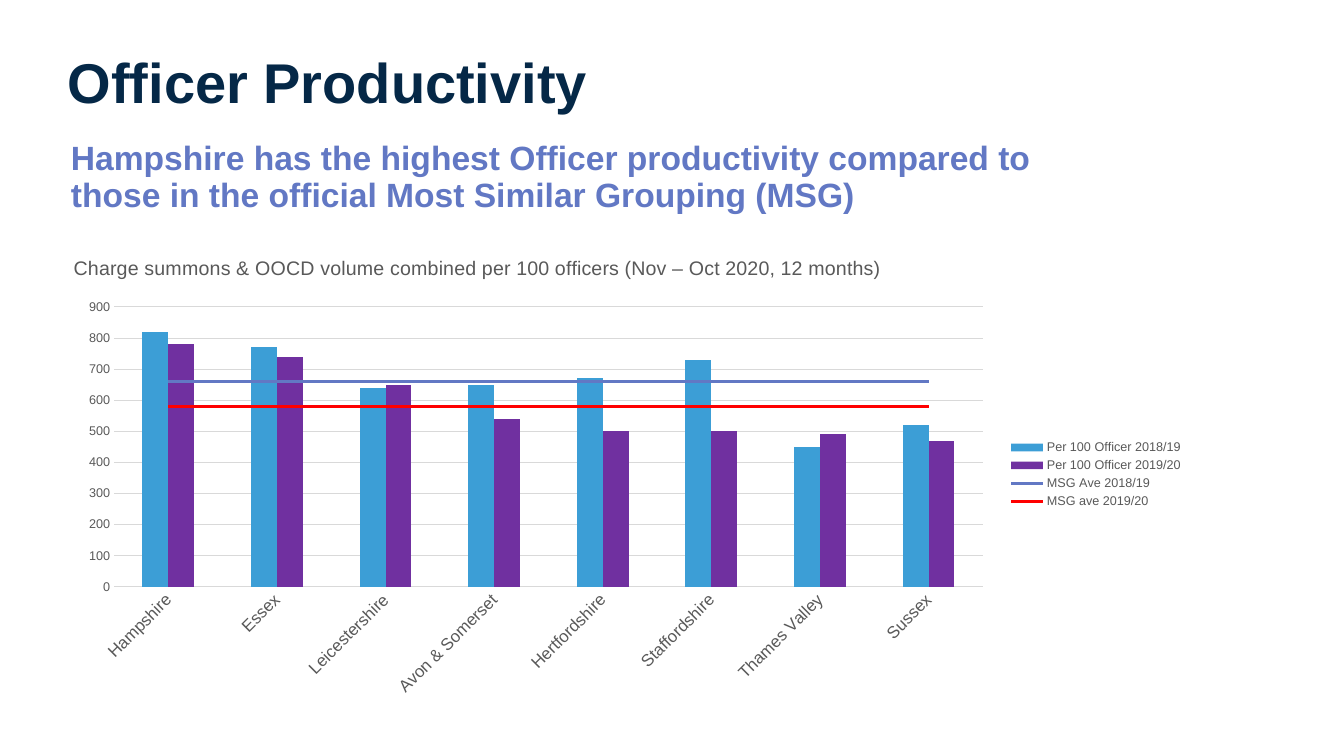
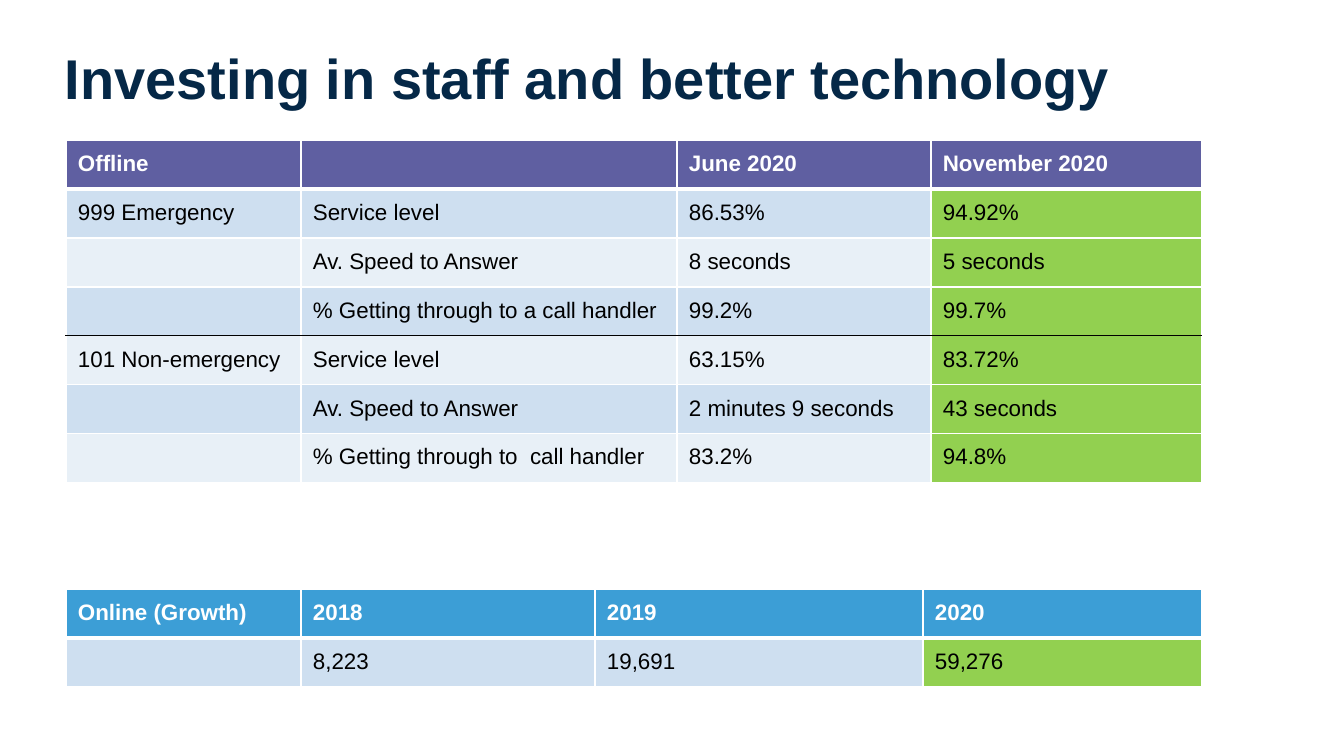
from dataclasses import dataclass

import lxml.etree
import pptx
import pptx.chart.chart
import pptx.chart.data
import pptx.dml.color
import pptx.enum.chart
import pptx.enum.text
import pptx.oxml.ns
import pptx.slide
import pptx.table
import pptx.text.text
import pptx.util

EMU_PER_PX = 914400 / 100.8
FONT = "Arial"
COLORS = {
    "navy": "052847",
    "periwinkle": "6278C4",
    "blue": "3C9ED6",
    "purple": "7030A0",
    "violet": "5F5FA1",
    "red": "FF0000",
    "green": "92D050",
    "band": "CEDFF0",
    "light_band": "E8F0F7",
    "gray": "595959",
    "grid": "D9D9D9",
    "black": "000000",
    "white": "FFFFFF",
}
ROW_HEIGHT = 49
CELL_MARGIN_X = 12
CELL_MARGIN_Y = 11


@dataclass(frozen=True)
class Box:
    left: int
    top: int
    width: int
    height: int

    def emu(self) -> tuple[pptx.util.Emu, ...]:
        return tuple(px(value) for value in (self.left, self.top, self.width, self.height))


@dataclass(frozen=True)
class Series:
    name: str
    values: list[int]
    color: str


@dataclass(frozen=True)
class Rule:
    """A horizontal line between table rows."""
    color: str = "white"
    points: int = 1


@dataclass(frozen=True)
class TableSpec:
    left: int
    top: int
    widths: list[int]
    header_color: str
    rows: list[list[str]]
    rules: dict[int, Rule]


CHART_BOX = Box(67, 244, 1125, 462)
PLOT_BOX = Box(114, 307, 869, 280)
CHART_TITLE_BOX = Box(70, 252, 806, 24)
LEGEND_BOX = Box(1007, 437, 178, 75)
CHART_TITLE = "Charge summons & OOCD volume combined per 100 officers (Nov – Oct 2020, 12 months)"
FORCES = ["Hampshire", "Essex", "Leicestershire", "Avon & Somerset",
          "Hertfordshire", "Staffordshire", "Thames Valley", "Sussex"]
COLUMN_SERIES = [
    Series("Per 100 Officer 2018/19", [820, 770, 640, 650, 670, 730, 450, 520], "blue"),
    Series("Per 100 Officer 2019/20", [780, 740, 650, 540, 500, 500, 490, 470], "purple"),
]
AVERAGE_SERIES = [
    Series("MSG Ave 2018/19", [660] * len(FORCES), "periwinkle"),
    Series("MSG ave 2019/20", [580] * len(FORCES), "red"),
]

HEADER_RULE = Rule(points=3)
OFFLINE_TABLE = TableSpec(66, 140, [235, 376, 254, 271], "violet", [
    ["Offline", "", "June 2020", "November 2020"],
    ["999 Emergency", "Service level", "86.53%", "94.92%"],
    ["", "Av. Speed to Answer", "8 seconds", "5 seconds"],
    ["", "% Getting through to a call handler", "99.2%", "99.7%"],
    ["101 Non-emergency", "Service level", "63.15%", "83.72%"],
    ["", "Av. Speed to Answer", "2 minutes 9 seconds", "43 seconds"],
    ["", "% Getting through to  call handler", "83.2%", "94.8%"],
], {1: HEADER_RULE, 4: Rule("black")})
ONLINE_TABLE = TableSpec(66, 589, [235, 294, 328, 279], "blue", [
    ["Online (Growth)", "2018", "2019", "2020"],
    ["", "8,223", "19,691", "59,276"],
], {1: HEADER_RULE})


def px(value: int) -> pptx.util.Emu:
    return pptx.util.Emu(round(value * EMU_PER_PX))


def rgb(color: str) -> pptx.dml.color.RGBColor:
    return pptx.dml.color.RGBColor.from_string(COLORS[color])


def style_font(font: pptx.text.text.Font, size: int, color: str, bold: bool = False) -> None:
    font.name = FONT
    font.size = pptx.util.Pt(size)
    font.bold = bold
    font.color.rgb = rgb(color)


def add_heading(slide: pptx.slide.Slide, box: Box, text: str, size: int,
                color: str) -> pptx.text.text.TextFrame:
    text_frame = slide.shapes.add_textbox(*box.emu()).text_frame
    text_frame.word_wrap = True
    text_frame.text = text
    style_font(text_frame.paragraphs[0].runs[0].font, size, color, bold=True)
    return text_frame


def add_title(slide: pptx.slide.Slide, box: Box, text: str) -> None:
    add_heading(slide, box, text, 40, "navy")


def add_child(parent: lxml.etree._Element, tag: str, **attributes: str) -> lxml.etree._Element:
    return lxml.etree.SubElement(parent, pptx.oxml.ns.qn(tag), attributes)


def remove_children(parent: lxml.etree._Element, tag: str) -> None:
    for child in parent.findall(pptx.oxml.ns.qn(tag)):
        parent.remove(child)


def place_chart_part(part: lxml.etree._Element, index: int, box: Box,
                     inner: bool = False, sized: bool = True) -> None:
    """Give a chart part a manual layout as fractions of the chart's box."""
    remove_children(part, "c:layout")
    layout = add_child(part, "c:layout")
    part.insert(index, layout)
    manual = add_child(layout, "c:manualLayout")
    if inner:
        add_child(manual, "c:layoutTarget", val="inner")
    add_child(manual, "c:xMode", val="edge")
    add_child(manual, "c:yMode", val="edge")
    fractions = {"c:x": (box.left - CHART_BOX.left) / CHART_BOX.width,
                 "c:y": (box.top - CHART_BOX.top) / CHART_BOX.height}
    if sized:
        fractions["c:w"] = box.width / CHART_BOX.width
        fractions["c:h"] = box.height / CHART_BOX.height
    for tag, fraction in fractions.items():
        add_child(manual, tag, val=f"{fraction:.4f}")


def move_averages_to_lines(chart: pptx.chart.chart.Chart) -> None:
    """Move the series after the columns into a line plot on the same axes."""
    qn = pptx.oxml.ns.qn
    bar_plot = chart._chartSpace.chart.plotArea.find(qn("c:barChart"))
    line_plot = bar_plot.makeelement(qn("c:lineChart"))
    bar_plot.addnext(line_plot)
    add_child(line_plot, "c:grouping", val="standard")
    add_child(line_plot, "c:varyColors", val="0")
    for series in bar_plot.findall(qn("c:ser"))[len(COLUMN_SERIES):]:
        remove_children(series, "c:invertIfNegative")
        line_plot.append(series)
    add_child(line_plot, "c:marker", val="1")
    for axis_id in bar_plot.findall(qn("c:axId")):
        add_child(line_plot, "c:axId", val=axis_id.get("val"))


def style_series(chart: pptx.chart.chart.Chart) -> None:
    columns, averages = chart.plots
    columns.vary_by_categories = False
    columns.gap_width = 219
    columns.overlap = 0
    for series, spec in zip(columns.series, COLUMN_SERIES):
        series.format.fill.solid()
        series.format.fill.fore_color.rgb = rgb(spec.color)
    for series, spec in zip(averages.series, AVERAGE_SERIES):
        series.smooth = False
        series.marker.style = pptx.enum.chart.XL_MARKER_STYLE.NONE
        series.format.line.color.rgb = rgb(spec.color)
        series.format.line.width = pptx.util.Pt(2.25)


def style_axes(chart: pptx.chart.chart.Chart) -> None:
    category_axis, value_axis = chart.category_axis, chart.value_axis
    for axis, size in ((category_axis, 12), (value_axis, 9)):
        axis.major_tick_mark = pptx.enum.chart.XL_TICK_MARK.NONE
        style_font(axis.tick_labels.font, size, "gray")
    value_axis.minimum_scale = 0
    value_axis.maximum_scale = 900
    value_axis.major_unit = 100
    value_axis.tick_labels.number_format = "0"
    value_axis.tick_labels.number_format_is_linked = False
    value_axis.format.line.fill.background()
    for line in (category_axis.format.line, value_axis.major_gridlines.format.line):
        line.color.rgb = rgb("grid")
        line.width = pptx.util.Pt(0.75)
    label_body = category_axis._element.find(".//" + pptx.oxml.ns.qn("a:bodyPr"))
    label_body.set("rot", "-2700000")
    label_body.set("vert", "horz")


def add_productivity_chart(slide: pptx.slide.Slide) -> None:
    data = pptx.chart.data.CategoryChartData(number_format="0")
    data.categories = FORCES
    for series in COLUMN_SERIES + AVERAGE_SERIES:
        data.add_series(series.name, series.values)
    chart = slide.shapes.add_chart(
        pptx.enum.chart.XL_CHART_TYPE.COLUMN_CLUSTERED, *CHART_BOX.emu(), data).chart
    style_font(chart.font, 10, "black")
    move_averages_to_lines(chart)
    style_series(chart)
    style_axes(chart)

    title = chart.chart_title
    title.text_frame.text = CHART_TITLE
    style_font(title.text_frame.paragraphs[0].runs[0].font, 14, "gray")
    chart.has_legend = True
    chart.legend.position = pptx.enum.chart.XL_LEGEND_POSITION.RIGHT
    chart.legend.include_in_layout = False
    style_font(chart.legend.font, 9, "gray")

    place_chart_part(title._element, 1, CHART_TITLE_BOX, sized=False)
    place_chart_part(chart.legend._element, 1, LEGEND_BOX)
    place_chart_part(chart._chartSpace.chart.plotArea, 0, PLOT_BOX, inner=True)


def set_borders(cell: pptx.table._Cell, above: Rule, below: Rule) -> None:
    properties = cell._tc.get_or_add_tcPr()
    sides = {"a:lnL": Rule(), "a:lnR": Rule(), "a:lnT": above, "a:lnB": below}
    for index, (tag, rule) in enumerate(sides.items()):
        line = add_child(properties, tag, w=str(int(pptx.util.Pt(rule.points))))
        add_child(add_child(line, "a:solidFill"), "a:srgbClr", val=COLORS[rule.color])
        properties.insert(index, line)


def fill_cell(cell: pptx.table._Cell, text: str, fill: str, header: bool) -> None:
    cell.margin_left = cell.margin_right = px(CELL_MARGIN_X)
    cell.margin_top = cell.margin_bottom = px(CELL_MARGIN_Y)
    cell.fill.solid()
    cell.fill.fore_color.rgb = rgb(fill)
    paragraph = cell.text_frame.paragraphs[0]
    if not text:
        add_child(paragraph._p, "a:endParaRPr", sz="1600")
        return
    paragraph.text = text
    style_font(paragraph.runs[0].font, 16, "white" if header else "black", bold=header)


def add_table(slide: pptx.slide.Slide, spec: TableSpec) -> None:
    box = Box(spec.left, spec.top, sum(spec.widths), ROW_HEIGHT * len(spec.rows))
    table = slide.shapes.add_table(len(spec.rows), len(spec.widths), *box.emu()).table
    for column, width in zip(table.columns, spec.widths):
        column.width = px(width)
    for row_index, texts in enumerate(spec.rows):
        table.rows[row_index].height = px(ROW_HEIGHT)
        for column_index, text in enumerate(texts):
            if row_index == 0:
                fill = spec.header_color
            elif column_index == len(texts) - 1:
                fill = "green"
            else:
                fill = "band" if row_index % 2 else "light_band"
            cell = table.cell(row_index, column_index)
            fill_cell(cell, text, fill, header=row_index == 0)
            set_borders(cell, spec.rules.get(row_index, Rule()),
                        spec.rules.get(row_index + 1, Rule()))


def build_productivity_slide(slide: pptx.slide.Slide) -> None:
    add_productivity_chart(slide)
    subtitle = add_heading(
        slide, Box(61, 134, 1000, 88),
        "Hampshire has the highest Officer productivity compared to "
        "those in the official Most Similar Grouping (MSG)", 24, "periwinkle")
    subtitle.vertical_anchor = pptx.enum.text.MSO_ANCHOR.MIDDLE
    subtitle.paragraphs[0].line_spacing = 0.9
    subtitle.paragraphs[0].space_after = pptx.util.Pt(6)
    add_title(slide, Box(58, 43, 704, 78), "Officer Productivity")


def build_technology_slide(slide: pptx.slide.Slide) -> None:
    add_table(slide, ONLINE_TABLE)
    add_table(slide, OFFLINE_TABLE)
    add_title(slide, Box(55, 39, 1129, 78), "Investing in staff and better technology")


def main() -> None:
    presentation = pptx.Presentation()
    presentation.slide_width = px(1344)
    presentation.slide_height = px(756)
    for build in (build_productivity_slide, build_technology_slide):
        build(presentation.slides.add_slide(presentation.slide_layouts[6]))
    presentation.save("out.pptx")


if __name__ == "__main__":
    main()
